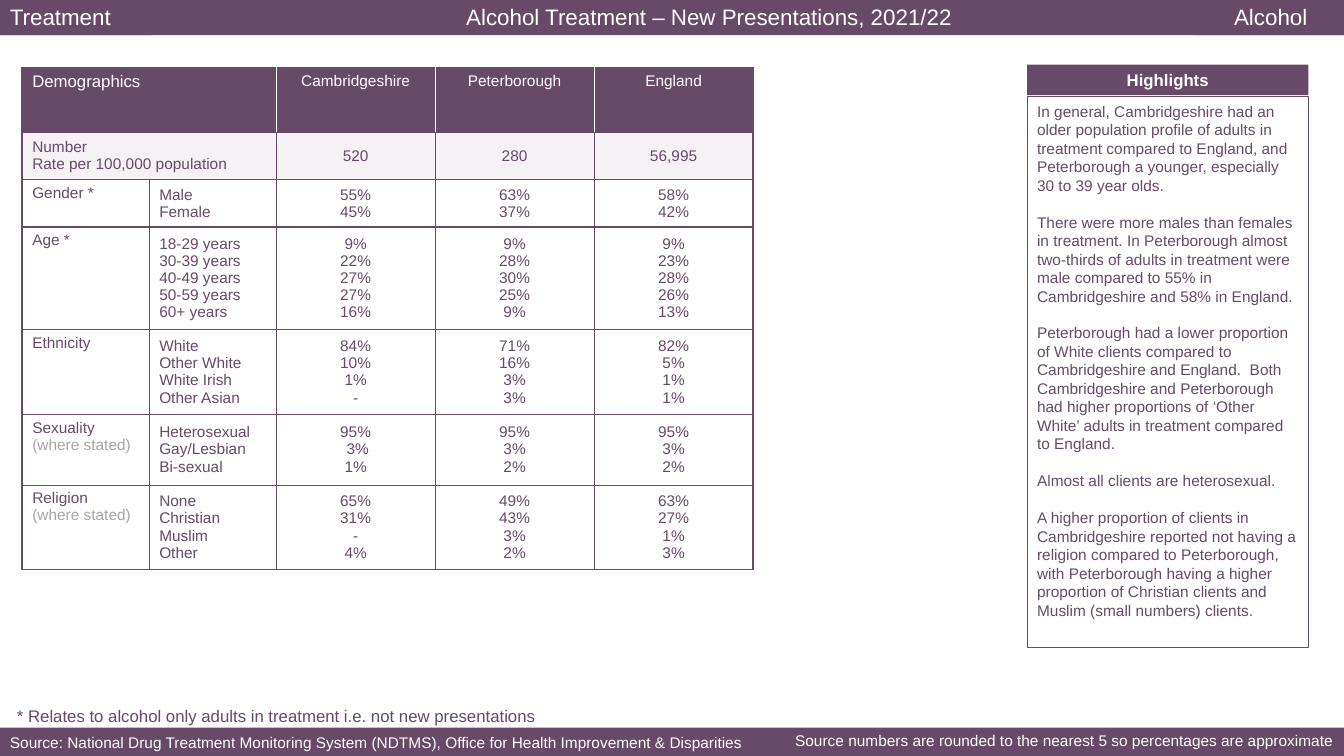
from dataclasses import dataclass
from typing import NamedTuple

from lxml.etree import SubElement
from pptx import Presentation
from pptx.dml.color import RGBColor as Color
from pptx.enum.shapes import MSO_SHAPE as Kind
from pptx.enum.text import MSO_ANCHOR as Anchor, PP_ALIGN as Align
from pptx.oxml.ns import qn
from pptx.util import Pt


@dataclass(frozen=True)
class Theme:
    """Colours, font and type sizes."""
    plum: str = "674A68"
    pale: str = "F5F1F5"
    white: str = "FFFFFF"
    grey: str = "A6A6A6"
    font: str = "Arial"
    title: float = 16
    head: float = 12
    body: float = 11


class Box(NamedTuple):
    """A block of text with its place and look."""
    left: float
    top: float
    width: float
    height: float
    lines: list[str]
    size: float
    ink: str
    fill: str | None = None
    line: str | None = None
    align: Align = Align.LEFT
    bold: bool = False
    inset: float = 7.2
    gap: float = 0
    plain: bool = False
    wrap: bool = True


class Group(NamedTuple):
    """A table row: its label, note, answers and shares by area."""
    height: float
    label: str
    note: str
    answers: list[str]
    shares: list[list[str]]


T = Theme()
HEAD = 46.0
RATE = 34.0
WIDTHS = [90.72, 90.72, 113.57, 113.57, 113.57]
AREAS = ["Cambridgeshire", "Peterborough", "England"]
TOTALS = ["520", "280", "56,995"]
GROUPS = [
    Group(34, "Gender *", "", ["Male", "Female"],
          [["55%", "45%"], ["63%", "37%"], ["58%", "42%"]]),
    Group(73, "Age *", "",
          ["18-29 years", "30-39 years", "40-49 years", "50-59 years", "60+ years"],
          [["9%", "22%", "27%", "27%", "16%"], ["9%", "28%", "30%", "25%", "9%"],
           ["9%", "23%", "28%", "26%", "13%"]]),
    Group(60.5, "Ethnicity", "", ["White", "Other White", "White Irish", "Other Asian"],
          [["84%", "10%", "1%", "-"], ["71%", "16%", "3%", "3%"],
           ["82%", "5%", "1%", "1%"]]),
    Group(50.4, "Sexuality ", "(where stated)",
          ["Heterosexual", "Gay/Lesbian", "Bi-sexual"],
          [["95%", " 3%", "1%"], ["95%", "3%", "2%"], ["95%", "3%", "2%"]]),
    Group(60.5, "Religion ", "(where stated)", ["None", "Christian", "Muslim", "Other"],
          [["65%", "31%", "-", "4%"], ["49%", "43%", "3%", "2%"],
           ["63%", "27%", "1%", "3%"]]),
]
NOTES = [
    "In general, Cambridgeshire had an older population profile of adults in treatment "
    "compared to England, and Peterborough a younger, especially 30 to 39 year olds.",
    "There were more males than females in treatment. In Peterborough almost two-thirds "
    "of adults in treatment were male compared to 55% in Cambridgeshire and 58% in England.",
    "Peterborough had a lower proportion of White clients compared to Cambridgeshire and "
    "England.  Both Cambridgeshire and Peterborough had higher proportions of ‘Other "
    "White’ adults in treatment compared to England.",
    "Almost all clients are heterosexual.",
    "A higher proportion of clients in Cambridgeshire reported not having a religion "
    "compared to Peterborough, with Peterborough having a higher proportion of Christian "
    "clients and Muslim (small numbers) clients.",
]
BOXES = [
    Box(733.7, 69.1, 200.9, 393.8, NOTES, T.body, T.plum, line=T.plum, gap=13.2),
    Box(0, -1.4, 960, 26.6, ["Alcohol Treatment – New Presentations, 2021/22"],
        T.title, T.white, T.plum, inset=333),
    Box(0, -1.4, 108, 26.6, ["Treatment"], T.title, T.white, T.plum),
    Box(0, 519.8, 960, 20.6,
        ["Source: National Drug Treatment Monitoring System (NDTMS), "
         "Office for Health Improvement & Disparities"], T.body, T.white, T.plum),
    Box(733.7, 46.1, 200.9, 21.8, ["Highlights"], T.head, T.white, T.plum,
        align=Align.CENTER, bold=True),
    Box(560.9, 518.4, 410.4, 20.6,
        ["Source numbers are rounded to the nearest 5 so percentages are approximate"],
        T.body, T.white, plain=True, wrap=False),
    Box(5, 500.4, 719.3, 21.8,
        ["* Relates to alcohol only adults in treatment i.e. not new presentations"],
        T.head, T.plum, plain=True),
    Box(855.4, -1.4, 104.6, 26.6, ["Alcohol"], T.title, T.white, T.plum,
        align=Align.CENTER),
]


def write(frame, lines: list[str], size: float, ink: str, align: Align = Align.LEFT,
          bold: bool = False, gap: float = 0) -> None:
    """Fill a text frame with one paragraph per line."""
    for i, line in enumerate(lines):
        para = frame.add_paragraph() if i else frame.paragraphs[0]
        para.add_run().text = line
        para.alignment = align
        para.space_before = Pt(gap if i else 0)
        font = para.font
        font.name, font.size, font.bold = T.font, Pt(size), bold
        font.color.rgb = Color.from_string(ink)


def draw(shapes, box: Box) -> None:
    """Draw a box with its text."""
    place = [Pt(n) for n in box[:4]]
    if box.plain:
        shape = shapes.add_textbox(*place)
    else:
        shape = shapes.add_shape(Kind.RECTANGLE, *place)
        shape.shadow.inherit = False
        if box.fill:
            shape.fill.solid()
            shape.fill.fore_color.rgb = Color.from_string(box.fill)
        else:
            shape.fill.background()
        if box.line:
            shape.line.color.rgb = Color.from_string(box.line)
            shape.line.width = Pt(0.75)
        else:
            shape.line.fill.background()
    frame = shape.text_frame
    frame.word_wrap = box.wrap
    frame.vertical_anchor = Anchor.TOP
    frame.margin_left = Pt(box.inset)
    write(frame, box.lines, box.size, box.ink, box.align, box.bold, box.gap)


def edge(cell, side: str, ink: str, width: float) -> None:
    """Add one border to a cell."""
    line = SubElement(cell._tc.get_or_add_tcPr(), qn(f"a:ln{side}"), w=str(Pt(width)))
    SubElement(SubElement(line, qn("a:solidFill")), qn("a:srgbClr"), val=ink)


def style(cell, row: int, col: int, last: int, span: int) -> None:
    """Set the borders and fill that suit a cell's place."""
    end = col + span - 1 == len(WIDTHS) - 1
    rule = (T.white, 0.75) if row == 0 else (T.plum, 0.5)
    edge(cell, "L", *(rule if col else (T.plum, 1.5)))
    edge(cell, "R", *((T.plum, 1.5) if end else rule))
    edge(cell, "T", T.plum, 1.5 if row == 0 else 1 if row in (2, 3) else 0.5)
    edge(cell, "B", T.plum, 1.5 if row == last else 1 if row in (1, 2) else 0.5)
    if row < 2:
        cell.fill.solid()
        cell.fill.fore_color.rgb = Color.from_string(T.pale if row else T.plum)
    else:
        cell.fill.background()


def chart(shapes) -> None:
    """Draw the table of client groups by area."""
    highs = [HEAD, RATE] + [group.height for group in GROUPS]
    table = shapes.add_table(len(highs), len(WIDTHS), Pt(15.84), Pt(48.2),
                             Pt(sum(WIDTHS)), Pt(sum(highs))).table
    table.first_row = table.horz_banding = False
    for col, width in zip(table.columns, WIDTHS):
        col.width = Pt(width)
    for row, high in zip(table.rows, highs):
        row.height = Pt(high)
    rows = [[["Demographics"], [], *([area] for area in AREAS)],
            [["Number", "Rate per 100,000 population"], [], *([n] for n in TOTALS)]]
    rows += [[[group.label], group.answers, *group.shares] for group in GROUPS]
    for r, row in enumerate(rows):
        if r < 2:
            table.cell(r, 0).merge(table.cell(r, 1))
        for c, lines in enumerate(row):
            cell = table.cell(r, c)
            style(cell, r, c, len(rows) - 1, 2 if cell.is_merge_origin else 1)
            top = r == 0 or (r > 1 and c == 0)
            cell.vertical_anchor = Anchor.TOP if top else Anchor.MIDDLE
            write(cell.text_frame, lines, T.head if r == c == 0 else T.body,
                  T.plum if r else T.white, Align.CENTER if c > 1 else Align.LEFT)
    for r, group in enumerate(GROUPS, 2):
        if group.note:
            run = table.cell(r, 0).text_frame.paragraphs[0].add_run()
            run.text = group.note
            run.font.color.rgb = Color.from_string(T.grey)


def main() -> None:
    """Build and save the slide."""
    deck = Presentation()
    deck.slide_width, deck.slide_height = Pt(960), Pt(540)
    shapes = deck.slides.add_slide(deck.slide_layouts[6]).shapes
    for box in BOXES[:-2]:
        draw(shapes, box)
    chart(shapes)
    for box in BOXES[-2:]:
        draw(shapes, box)
    deck.save("out.pptx")


if __name__ == "__main__":
    main()
